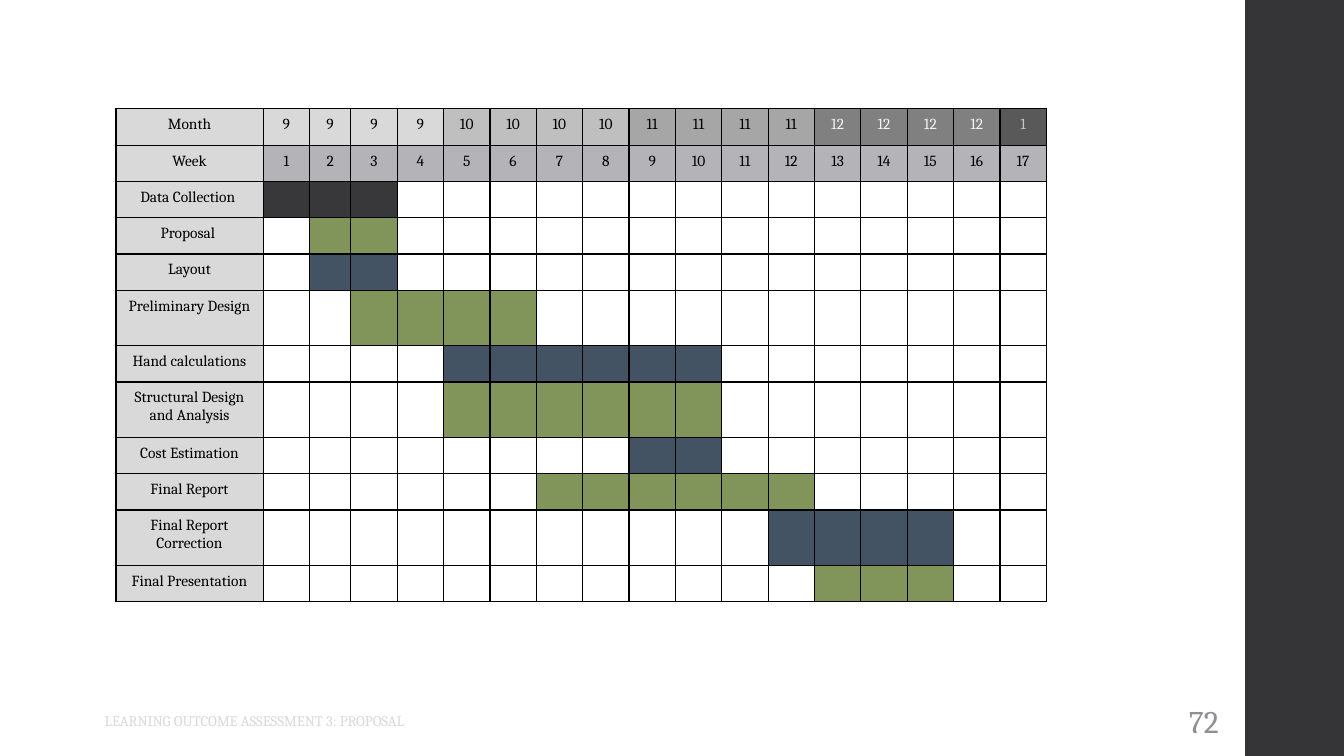
from dataclasses import dataclass

from lxml.etree import SubElement
from pptx import Presentation
from pptx.dml.color import RGBColor
from pptx.enum.shapes import MSO_SHAPE as Shape
from pptx.enum.text import MSO_ANCHOR as Anchor, PP_ALIGN as Align
from pptx.oxml.ns import qn
from pptx.util import Inches, Pt


@dataclass(frozen=True)
class Theme:
    font: str = "Cambria"
    ink: str = "000000"
    white: str = "FFFFFF"
    side_bar: str = "353537"
    footer: str = "D9D9DB"
    number: str = "8E8E94"
    label: str = "D9D9D9"
    week: str = "B4B4B8"
    charcoal: str = "38383A"
    green: str = "81955B"
    blue: str = "445364"
    cell_size: float = 11
    footer_size: float = 10.5
    number_size: float = 22.5
    border: float = 1


THEME = Theme()

# month, weeks in it, fill, text colour
MONTHS = [
    ("9", 4, THEME.label, THEME.ink),
    ("10", 4, "BFBFBF", THEME.ink),
    ("11", 4, "A6A6A6", THEME.ink),
    ("12", 4, "808080", "F3F3F3"),
    ("1", 1, "595959", "C6C6C6"),
]
# task, first week, last week, bar colour
TASKS = [
    ("Data Collection ", 1, 3, THEME.charcoal),
    ("Proposal ", 2, 3, THEME.green),
    ("Layout", 2, 3, THEME.blue),
    ("Preliminary Design", 3, 6, THEME.green),
    ("Hand calculations", 5, 10, THEME.blue),
    ("Structural Design and Analysis", 5, 10, THEME.green),
    ("Cost Estimation", 9, 10, THEME.blue),
    ("Final Report", 7, 12, THEME.green),
    ("Final Report Correction", 12, 15, THEME.blue),
    ("Final Presentation", 13, 15, THEME.green),
]
WEEKS = 17
ROW_HEIGHT, TALL_ROW_HEIGHT = 0.36, 0.55
TALL_TASKS = {"Preliminary Design", "Structural Design and Analysis",
              "Final Report Correction"}


def rgb(value):
    return RGBColor.from_string(value)


def style_text(para, size, color):
    for span in para.runs:
        span.font.name = THEME.font
        span.font.size = Pt(size)
        span.font.color.rgb = rgb(color)


def add_side_bar(page, left, top, width, height):
    bar = page.shapes.add_shape(Shape.RECTANGLE, Inches(left), Inches(top),
                                Inches(width), Inches(height))
    bar.shadow.inherit = False
    bar.fill.solid()
    bar.fill.fore_color.rgb = rgb(THEME.side_bar)
    bar.line.fill.background()


def add_footer_text(page, place, text, size, color, align):
    box = page.shapes.add_textbox(*map(Inches, place))
    frame = box.text_frame
    frame.word_wrap = True
    frame.vertical_anchor = Anchor.MIDDLE
    frame.text = text
    para = frame.paragraphs[0]
    para.alignment = align
    para.space_after = Pt(6)
    style_text(para, size, color)


def add_borders(cell):
    properties = cell._tc.get_or_add_tcPr()
    for side in ("a:lnL", "a:lnR", "a:lnT", "a:lnB"):
        line = SubElement(properties, qn(side), w=str(Pt(THEME.border)))
        fill = SubElement(line, qn("a:solidFill"))
        SubElement(fill, qn("a:srgbClr"), val=THEME.ink)


def fill_cell(cell, text, fill, color=THEME.ink):
    cell.margin_left = cell.margin_right = Inches(0.07)
    cell.margin_top = cell.margin_bottom = Inches(0.07)
    add_borders(cell)
    cell.fill.solid()
    cell.fill.fore_color.rgb = rgb(fill)
    para = cell.text_frame.paragraphs[0]
    para.alignment = Align.CENTER
    if text:
        para.text = text
        style_text(para, THEME.cell_size, color)
    else:
        # Keeps an empty cell from stretching its row
        SubElement(para._p, qn("a:endParaRPr"), sz=str(int(THEME.cell_size * 100)))


def schedule_rows():
    """Return each row as a list of (text, fill, text colour)."""
    months = [("Month", THEME.label, THEME.ink)]
    for month, count, fill, color in MONTHS:
        months += [(month, fill, color)] * count
    weeks = [("Week", THEME.label, THEME.ink)]
    weeks += [(str(week), THEME.week, THEME.ink) for week in range(1, WEEKS + 1)]
    rows = [months, weeks]
    for task, first, last, bar in TASKS:
        rows.append([(task, THEME.label, THEME.ink)] + [
            ("", bar if first <= week <= last else THEME.white, THEME.ink)
            for week in range(1, WEEKS + 1)])
    return rows


def add_schedule(page, left, top, width, height):
    rows = schedule_rows()
    table = page.shapes.add_table(len(rows), WEEKS + 1, Inches(left), Inches(top),
                                  Inches(width), Inches(height)).table
    table.first_row = table.horz_banding = False
    for column in table.columns:
        column.width = Inches(0.46)
    table.columns[0].width = Inches(1.46)
    table.columns[2].width = Inches(0.41)
    for row, values in zip(table.rows, rows):
        tall = values[0][0] in TALL_TASKS
        row.height = Inches(TALL_ROW_HEIGHT if tall else ROW_HEIGHT)
        for cell, (text, fill, color) in zip(row.cells, values):
            fill_cell(cell, text, fill, color)


def build_schedule_page(deck):
    page = deck.slides.add_slide(deck.slide_layouts[6])
    add_side_bar(page, 12.35, 0, 0.98, 7.5)
    add_footer_text(page, (0.94, 6.9, 5.41, 0.5),
                    "LEARNING OUTCOME ASSESSMENT 3: PROPOSAL",
                    THEME.footer_size, THEME.footer, Align.LEFT)
    add_footer_text(page, (11.4, 6.9, 1.08, 0.5), "72",
                    THEME.number_size, THEME.number, Align.CENTER)
    add_schedule(page, 1.15, 1.08, 9.19, 4.9)


def main():
    deck = Presentation()
    deck.slide_width = Inches(13.33)
    deck.slide_height = Inches(7.5)
    build_schedule_page(deck)
    deck.save("out.pptx")


if __name__ == "__main__":
    main()
